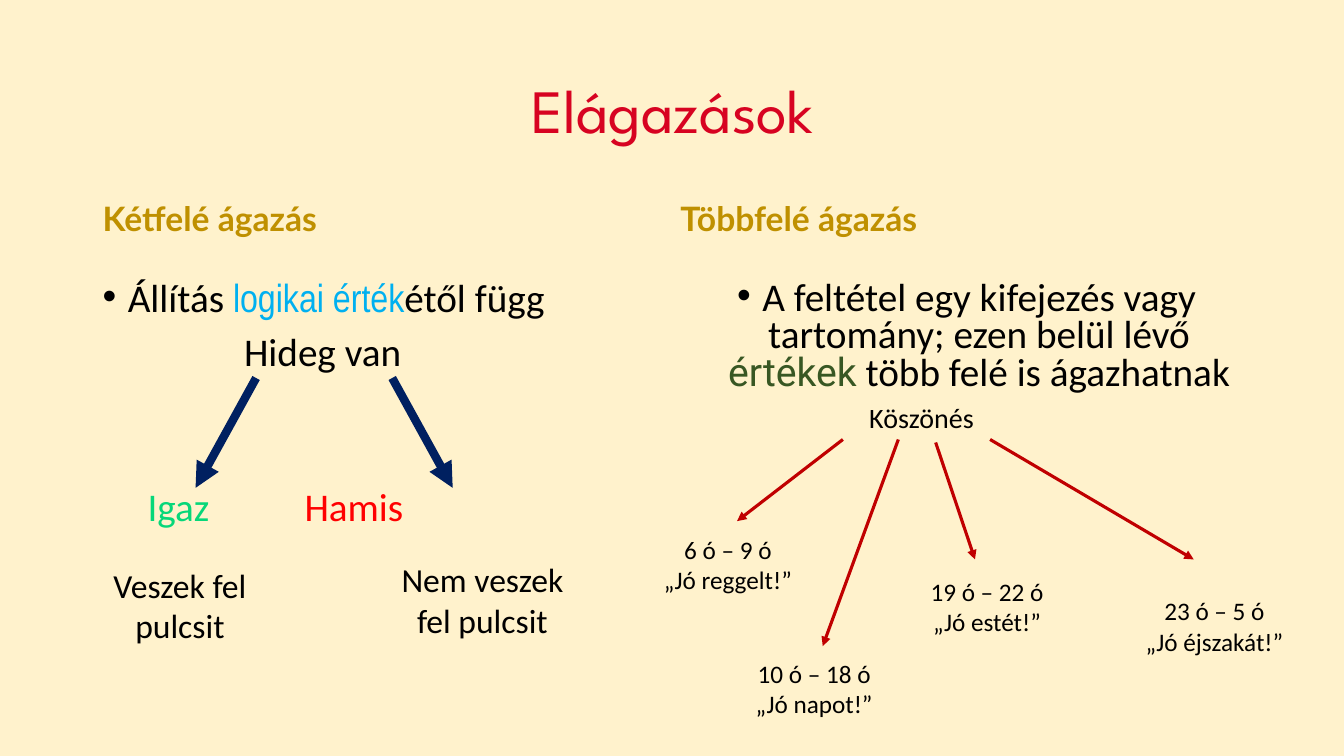
from pptx import Presentation
from pptx.dml.color import RGBColor
from pptx.enum.shapes import MSO_CONNECTOR
from pptx.enum.text import MSO_ANCHOR, PP_ALIGN
from pptx.oxml.ns import qn
from pptx.util import Pt
from lxml.etree import SubElement

PX = 9144
COLORS = {
    "cream": "FFF2CC", "title": "D70321", "gold": "BF9000", "black": "000000",
    "blue": "00B0F0", "olive": "385723", "green": "07D779", "red": "FF0000",
    "navy": "002060", "crimson": "C00000",
}


def add_text(bounds, lines, size, color="black", font="Calibri", align=PP_ALIGN.CENTER,
             anchor=MSO_ANCHOR.TOP, spacing=1.0, before=0, bold=False, bullet=False):
    box = page.shapes.add_textbox(*[value * PX for value in bounds])
    frame = box.text_frame
    frame.word_wrap = True
    frame.vertical_anchor = anchor
    for index, spans in enumerate(lines):
        para = frame.paragraphs[0] if index == 0 else frame.add_paragraph()
        para.alignment = align
        para.line_spacing = spacing
        para.space_before = Pt(before)
        para.font.size = Pt(size)
        para.font.bold = bold
        for words, span_font, span_color in spans:
            span = para.add_run()
            span.text = words
            span.font.name = span_font or font
            span.font.color.rgb = RGBColor.from_string(COLORS[span_color or color])
        if bullet:
            properties = para._p.get_or_add_pPr()
            properties.set("marL", str(25 * PX))
            properties.set("indent", str(-25 * PX))
            SubElement(properties, qn("a:buFont"), typeface="Arial")
            SubElement(properties, qn("a:buChar"), char="•")


def add_arrow(start, end, color, width):
    arrow = page.shapes.add_connector(
        MSO_CONNECTOR.STRAIGHT, *[value * PX for value in start + end])
    arrow.line.color.rgb = RGBColor.from_string(COLORS[color])
    arrow.line.width = Pt(width)
    SubElement(arrow.line._get_or_add_ln(), qn("a:tailEnd"), type="triangle")
    SubElement(arrow._element.spPr, qn("a:effectLst"))


deck = Presentation()
deck.slide_width = 1333 * PX
deck.slide_height = 750 * PX
page = deck.slides.add_slide(deck.slide_layouts[6])
page.background.fill.solid()
page.background.fill.fore_color.rgb = RGBColor.from_string(COLORS["cream"])

add_text((92, 40, 1150, 145), [[("Elágazások", None, None)]], 44, "title",
         "League Spartan", anchor=MSO_ANCHOR.MIDDLE, spacing=0.9)

for left, heading in [(92, "Kétfelé ágazás"), (665, "Többfelé ágazás")]:
    add_text((left, 152, 565, 90), [[(heading, None, None)]], 24, "gold", "Lato",
             PP_ALIGN.LEFT, MSO_ANCHOR.BOTTOM, 0.9, 10, bold=True)

two_way = [("Állítás ", None, None), ("logikai érték", "Arial Narrow", "blue"),
           ("étől függ", None, None)]
many_way = [("A feltétel egy kifejezés vagy tartomány; ezen belül lévő ", None, None),
            ("értékek", "Roboto", "olive"), (" több felé is ágazhatnak", None, None)]
for bounds, spans, align in [((92, 275, 564, 55), two_way, PP_ALIGN.LEFT),
                             ((675, 274, 567, 130), many_way, PP_ALIGN.CENTER)]:
    add_text(bounds, [spans], 28, align=align, spacing=0.8, before=10, bullet=True)

labels = [
    ((220, 320, 200, 57), ["Hideg van"], 28, "black"),
    ((117, 474, 120, 57), ["Igaz"], 28, "green"),
    ((281, 474, 140, 57), ["Hamis"], 28, "red"),
    ((92, 555, 173, 91), ["Veszek fel pulcsit"], 24, "black"),
    ((388, 550, 181, 91), ["Nem veszek fel pulcsit"], 24, "black"),
    ((847, 392, 134, 44), ["Köszönés"], 20, "black"),
    ((637, 525, 170, 71), ["6 ó – 9 ó", "„Jó reggelt!”"], 18, "black"),
    ((707, 648, 201, 71), ["10 ó – 18 ó", "„Jó napot!”"], 18, "black"),
    ((900, 567, 158, 71), ["19 ó – 22 ó", "„Jó estét!”"], 18, "black"),
    ((1102, 586, 205, 71), ["23 ó – 5 ó", "„Jó éjszakát!”"], 18, "black"),
]
for bounds, lines, size, color in labels:
    add_text(bounds, [[(line, None, None)] for line in lines], size, color)

for start, end in [((254, 375), (194, 484)), ((389, 375), (449, 484))]:
    add_arrow(start, end, "navy", 6)

for start, end in [((836, 436), (731, 517)), ((891, 436), (816, 641)),
                   ((928, 439), (967, 555)), ((982, 436), (1184, 555))]:
    add_arrow(start, end, "crimson", 2.25)

deck.save("out.pptx")
